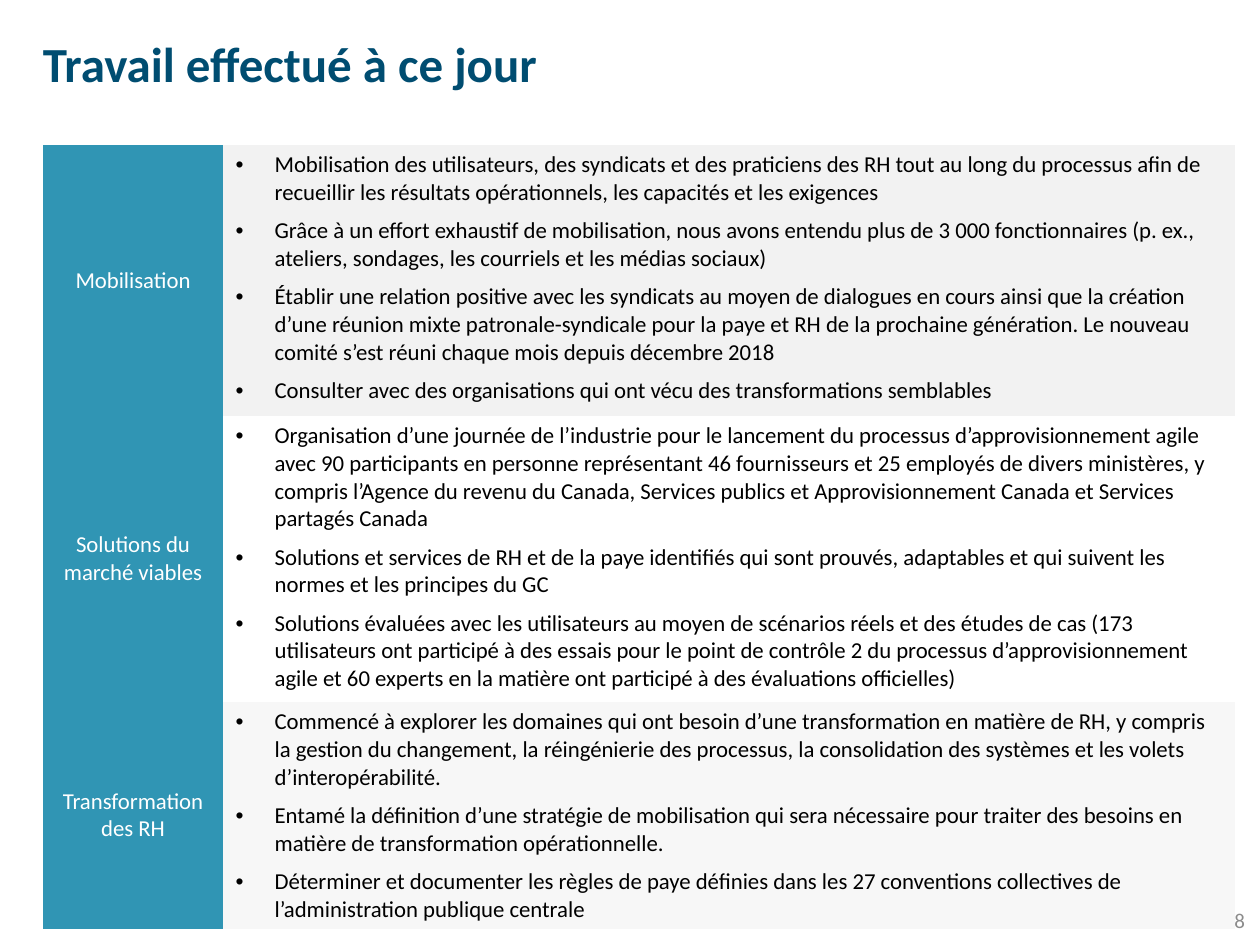
from lxml.etree import SubElement
from pptx import Presentation
from pptx.dml.color import RGBColor
from pptx.enum.text import MSO_ANCHOR, PP_ALIGN
from pptx.oxml.ns import qn
from pptx.util import Inches, Pt

FONT = "Calibri"
NAVY = RGBColor(0x00, 0x4D, 0x71)
TEAL = RGBColor(0x30, 0x95, 0xB4)
WHITE = RGBColor(0xFF, 0xFF, 0xFF)
BLACK = RGBColor(0x00, 0x00, 0x00)
GREY = RGBColor(0x8C, 0x8C, 0x8C)
PALE = RGBColor(0xF2, 0xF2, 0xF2)
PALEST = RGBColor(0xF7, 0xF7, 0xF7)
NO_GRID_STYLE = "{2D5ABB26-0587-4C30-8999-92F81FD0307C}"

THEMES = [
    ("Mobilisation", 2.15, PALE, [
        "Mobilisation des utilisateurs, des syndicats et des praticiens des RH tout au long du processus afin de "
        "recueillir les résultats opérationnels, les capacités et les exigences",
        "Grâce à un effort exhaustif de mobilisation, nous avons entendu plus de 3 000 fonctionnaires (p. ex., "
        "ateliers, sondages, les courriels et les médias sociaux)",
        "Établir une relation positive avec les syndicats au moyen de dialogues en cours ainsi que la création "
        "d’une réunion mixte patronale-syndicale pour la paye et RH de la prochaine génération. Le nouveau "
        "comité s’est réuni chaque mois depuis décembre 2018",
        "Consulter avec des organisations qui ont vécu des transformations semblables",
    ]),
    ("Solutions du marché viables", 2.27, None, [
        "Organisation d’une journée de l’industrie pour le lancement du processus d’approvisionnement agile "
        "avec 90 participants en personne représentant 46 fournisseurs et 25 employés de divers ministères, y "
        "compris l’Agence du revenu du Canada, Services publics et Approvisionnement Canada et Services "
        "partagés Canada",
        "Solutions et services de RH et de la paye identifiés qui sont prouvés, adaptables et qui suivent les "
        "normes et les principes du GC",
        "Solutions évaluées avec les utilisateurs au moyen de scénarios réels et des études de cas (173 "
        "utilisateurs ont participé à des essais pour le point de contrôle 2 du processus d’approvisionnement "
        "agile et 60 experts en la matière ont participé à des évaluations officielles)",
    ]),
    ("Transformation des RH", 1.8, PALEST, [
        "Commencé à explorer les domaines qui ont besoin d’une transformation en matière de RH, y compris "
        "la gestion du changement, la réingénierie des processus, la consolidation des systèmes et les volets "
        "d’interopérabilité.",
        "Entamé la définition d’une stratégie de mobilisation qui sera nécessaire pour traiter des besoins en "
        "matière de transformation opérationnelle.",
        "Déterminer et documenter les règles de paye définies dans les 27 conventions collectives de "
        "l’administration publique centrale",
    ]),
]


def add_span(para, text, size, color, bold=False):
    """Add one styled run to a paragraph."""
    span = para.add_run()
    span.text = text
    span.font.name = FONT
    span.font.size = Pt(size)
    span.font.bold = bold
    span.font.color.rgb = color


def add_bullet(para):
    """Give a paragraph a hanging round bullet."""
    properties = para._p.get_or_add_pPr()
    properties.set("marL", str(Inches(0.31)))
    properties.set("indent", str(-Inches(0.31)))
    SubElement(properties, qn("a:buFont"), typeface="Arial")
    SubElement(properties, qn("a:buChar"), char="•")


def fill_cell(cell, color):
    """Paint a cell, or leave it clear when no colour is given."""
    if color is None:
        cell.fill.background()
    else:
        cell.fill.solid()
        cell.fill.fore_color.rgb = color


def add_title(page, left, top, width, height):
    """Place the slide title."""
    frame = page.shapes.add_textbox(left, top, width, height).text_frame
    frame.word_wrap = True
    frame.margin_left = frame.margin_right = frame.margin_top = frame.margin_bottom = 0
    para = frame.paragraphs[0]
    para.line_spacing = 0.8
    add_span(para, "Travail effectué à ce jour", 28, NAVY, bold=True)


def add_page_number(page, left, top, width, height):
    """Place the page number at the lower right."""
    frame = page.shapes.add_textbox(left, top, width, height).text_frame
    frame.word_wrap = True
    frame.vertical_anchor = MSO_ANCHOR.MIDDLE
    para = frame.paragraphs[0]
    para.alignment = PP_ALIGN.RIGHT
    add_span(para, "8", 12, GREY)


def add_progress_table(page, left, top, width, height):
    """Place the table of themes and the work done on each."""
    holder = page.shapes.add_table(len(THEMES), 2, left, top, width, height)
    table = holder.table
    table.first_row = table.horz_banding = False
    next(holder.element.iter(qn("a:tableStyleId"))).text = NO_GRID_STYLE
    label_width = Inches(1.43)
    table.columns[0].width = label_width
    table.columns[1].width = width - label_width
    for row, (theme, row_height, color, points) in zip(table.rows, THEMES):
        row.height = Inches(row_height)
        label, details = row.cells
        fill_cell(label, TEAL)
        fill_cell(details, color)
        label.vertical_anchor = MSO_ANCHOR.MIDDLE
        para = label.text_frame.paragraphs[0]
        para.alignment = PP_ALIGN.CENTER
        add_span(para, theme, 13, WHITE)
        frame = details.text_frame
        for index, point in enumerate(points):
            para = frame.add_paragraph() if index else frame.paragraphs[0]
            add_bullet(para)
            para.space_after = Pt(6)
            add_span(para, point, 13, BLACK)


def main():
    """Build and save the deck."""
    deck = Presentation()
    deck.slide_width, deck.slide_height = Inches(10), Inches(7.5)
    page = deck.slides.add_slide(deck.slide_layouts[6])
    add_page_number(page, Inches(7.65), Inches(7.1), Inches(2.33), Inches(0.4))
    add_title(page, Inches(0.34), Inches(0.36), Inches(8.97), Inches(0.51))
    add_progress_table(page, Inches(0.34), Inches(1.15), Inches(9.46), Inches(6.22))
    deck.save("out.pptx")


if __name__ == "__main__":
    main()
